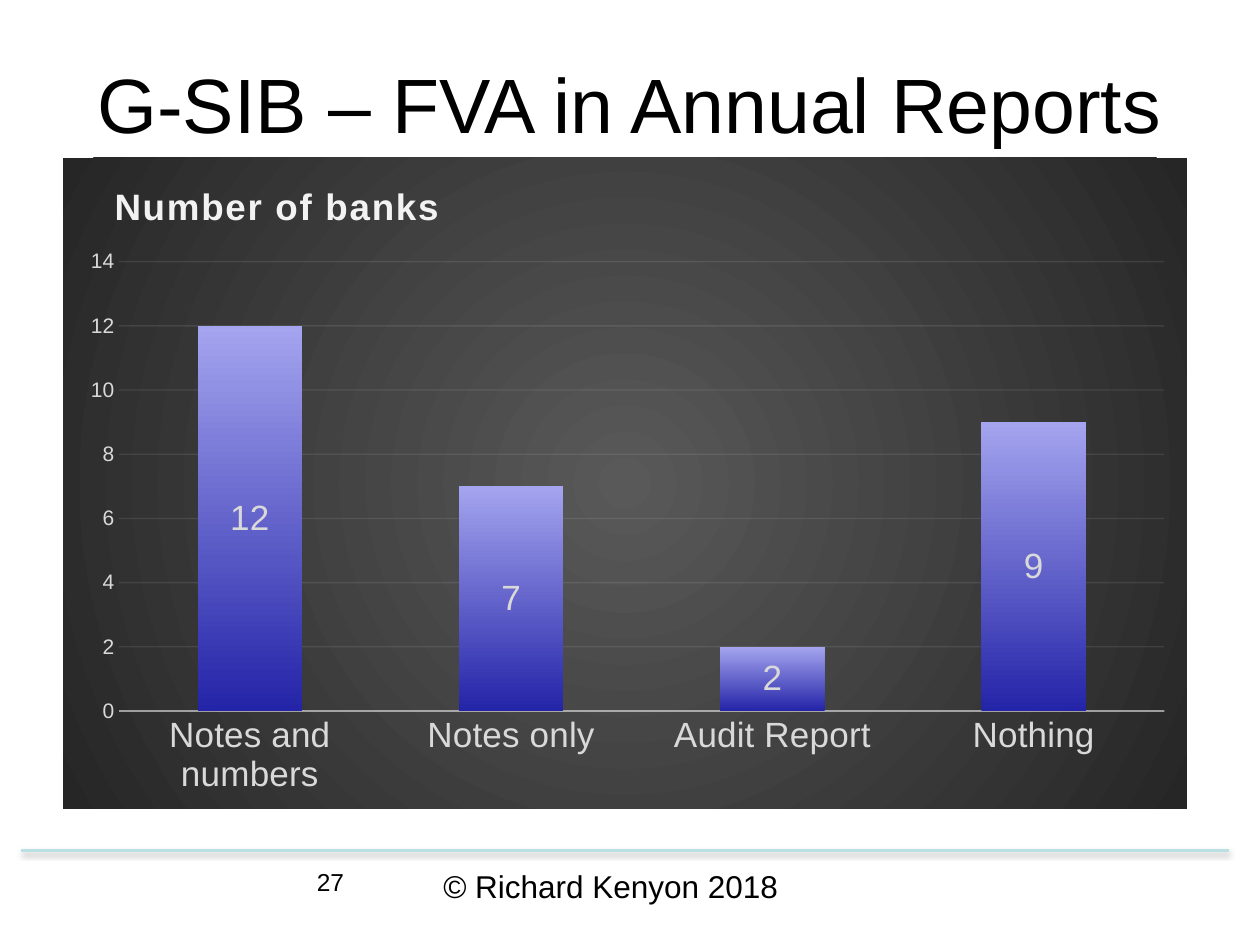
from lxml import etree
from pptx import Presentation
from pptx.chart.data import CategoryChartData
from pptx.dml.color import RGBColor
from pptx.enum import chart as kinds, shapes, text
from pptx.oxml import parse_xml
from pptx.oxml.ns import nsdecls, qn
from pptx.util import Inches, Pt

FONT = "Arial"
BLACK = RGBColor(0x00, 0x00, 0x00)
RULE = RGBColor(0xBB, 0xE0, 0xE3)
LABEL = RGBColor(0xD9, 0xD9, 0xD9)
PALE = RGBColor(0xF2, 0xF2, 0xF2)
BAR_BOTTOM = RGBColor(0x24, 0x24, 0xA8)
BAR_TOP = RGBColor(0xA4, 0xA4, 0xEF)
PANEL_CENTRE = RGBColor(0x59, 0x59, 0x59)
PANEL_EDGE = RGBColor(0x26, 0x26, 0x26)

BANKS = {"Notes and numbers": 12, "Notes only": 7, "Audit Report": 2, "Nothing": 9}


def style_font(font, size, color, bold=False):
    font.name = FONT
    font.size = Pt(size)
    font.bold = bold
    font.color.rgb = color


def add_text(page, words, left, top, width, height, size=18, color=BLACK,
             align=text.PP_ALIGN.LEFT, anchor=text.MSO_ANCHOR.TOP):
    box = page.shapes.add_textbox(Inches(left), Inches(top), Inches(width), Inches(height))
    frame = box.text_frame
    frame.word_wrap = True
    frame.vertical_anchor = anchor
    para = frame.paragraphs[0]
    para.alignment = align
    span = para.add_run()
    span.text = words
    style_font(span.font, size, color)


def add_footer_rule(page):
    rule = page.shapes.add_connector(shapes.MSO_CONNECTOR.STRAIGHT, Inches(9.75),
                                     Inches(6.75), Inches(0.17), Inches(6.75))
    rule.line.color.rgb = RULE
    rule.line.width = Pt(2)
    rule._element.spPr.append(parse_xml(
        f'<a:effectLst {nsdecls("a")}>'
        f'<a:outerShdw blurRad="{Pt(3.1)}" dist="{Pt(1.6)}" dir="5400000" rotWithShape="0">'
        '<a:srgbClr val="808080"><a:alpha val="38000"/></a:srgbClr>'
        '</a:outerShdw></a:effectLst>'))


def style_line(line, color, width, opacity):
    """Set a solid line; opacity is in percent."""
    line.color.rgb = color
    line.width = Pt(width)
    for tint in line._get_or_add_ln().iter(qn("a:srgbClr")):
        etree.SubElement(tint, qn("a:alpha")).set("val", str(opacity * 1000))


def manual_layout(target, **fractions):
    """Place the plot area or title by fractions of the chart's size."""
    for old in target.findall(qn("c:layout")):
        target.remove(old)
    inner = '<c:layoutTarget val="inner"/>' if "w" in fractions else ""
    modes = '<c:xMode val="edge"/><c:yMode val="edge"/>'
    places = "".join(f'<c:{key} val="{value}"/>' for key, value in fractions.items())
    layout = parse_xml(f'<c:layout {nsdecls("c")}><c:manualLayout>{inner}{modes}{places}'
                       '</c:manualLayout></c:layout>')
    target.insert(1 if target.find(qn("c:tx")) is not None else 0, layout)


def fill_panel(chart):
    """Give the chart area a radial gradient."""
    area = parse_xml(
        f'<c:spPr {nsdecls("c", "a")}><a:gradFill><a:gsLst>'
        f'<a:gs pos="0"><a:srgbClr val="{PANEL_CENTRE}"/></a:gs>'
        f'<a:gs pos="100000"><a:srgbClr val="{PANEL_EDGE}"/></a:gs></a:gsLst>'
        '<a:path path="circle"><a:fillToRect l="50000" t="50000" r="50000" b="50000"/></a:path>'
        '</a:gradFill><a:ln><a:noFill/></a:ln></c:spPr>')
    chart._chartSpace.find(qn("c:chart")).addnext(area)


def style_title(chart, words):
    chart.has_title = True
    title = chart.chart_title
    span = title.text_frame.paragraphs[0].add_run()
    span.text = words
    style_font(span.font, 21, PALE, bold=True)
    span._r.get_or_add_rPr().set("spc", "100")
    title.include_in_layout = False
    manual_layout(title._element, x=0.04, y=0.03)


def style_axes(chart):
    for axis, size in ((chart.category_axis, 20), (chart.value_axis, 12)):
        axis.major_tick_mark = axis.minor_tick_mark = kinds.XL_TICK_MARK.NONE
        style_font(axis.tick_labels.font, size, LABEL)
    style_line(chart.category_axis.format.line, PALE, 1, 54)
    values = chart.value_axis
    values.minimum_scale, values.maximum_scale, values.major_unit = 0, 14, 2
    values.format.line.fill.background()
    values.has_major_gridlines = True
    style_line(values.major_gridlines.format.line, PALE, 0.75, 10)


def style_bars(plot):
    plot.gap_width = 150
    plot.overlap = 100
    plot.vary_by_categories = False
    bars = plot.series[0]
    fill = bars.format.fill
    fill.gradient()
    fill.gradient_angle = 90
    for stop, color in zip(fill.gradient_stops, (BAR_BOTTOM, BAR_TOP)):
        stop.color.rgb = color
    labels = bars.data_labels
    labels.show_value = True
    labels.position = kinds.XL_LABEL_POSITION.CENTER
    style_font(labels.font, 20, LABEL)


def add_bank_chart(page):
    data = CategoryChartData()
    data.categories = list(BANKS)
    data.add_series("Series 1", list(BANKS.values()))
    chart = page.shapes.add_chart(kinds.XL_CHART_TYPE.COLUMN_STACKED, Inches(0.5), Inches(1.25),
                                  Inches(8.92), Inches(5.17), data).chart
    chart.has_legend = False
    style_font(chart.font, 10, BLACK)
    style_title(chart, "Number of banks")
    style_axes(chart)
    style_bars(chart.plots[0])
    manual_layout(chart._chartSpace.chart.plotArea, x=0.05, y=0.16, w=0.93, h=0.69)
    fill_panel(chart)


def main():
    deck = Presentation()
    deck.slide_width, deck.slide_height = Inches(10), Inches(7.5)
    page = deck.slides.add_slide(deck.slide_layouts[6])
    add_footer_rule(page)
    add_text(page, "G-SIB – FVA in Annual Reports", 0.5, 0.3, 9, 1.03, size=44,
             align=text.PP_ALIGN.CENTER, anchor=text.MSO_ANCHOR.MIDDLE)
    add_text(page, "27", 0.5, 6.83, 2.33, 0.52, size=14, align=text.PP_ALIGN.RIGHT)
    add_bank_chart(page)
    add_text(page, "© Richard Kenyon 2018", 3.42, 6.83, 3.17, 0.52)
    deck.save("out.pptx")


if __name__ == "__main__":
    main()
